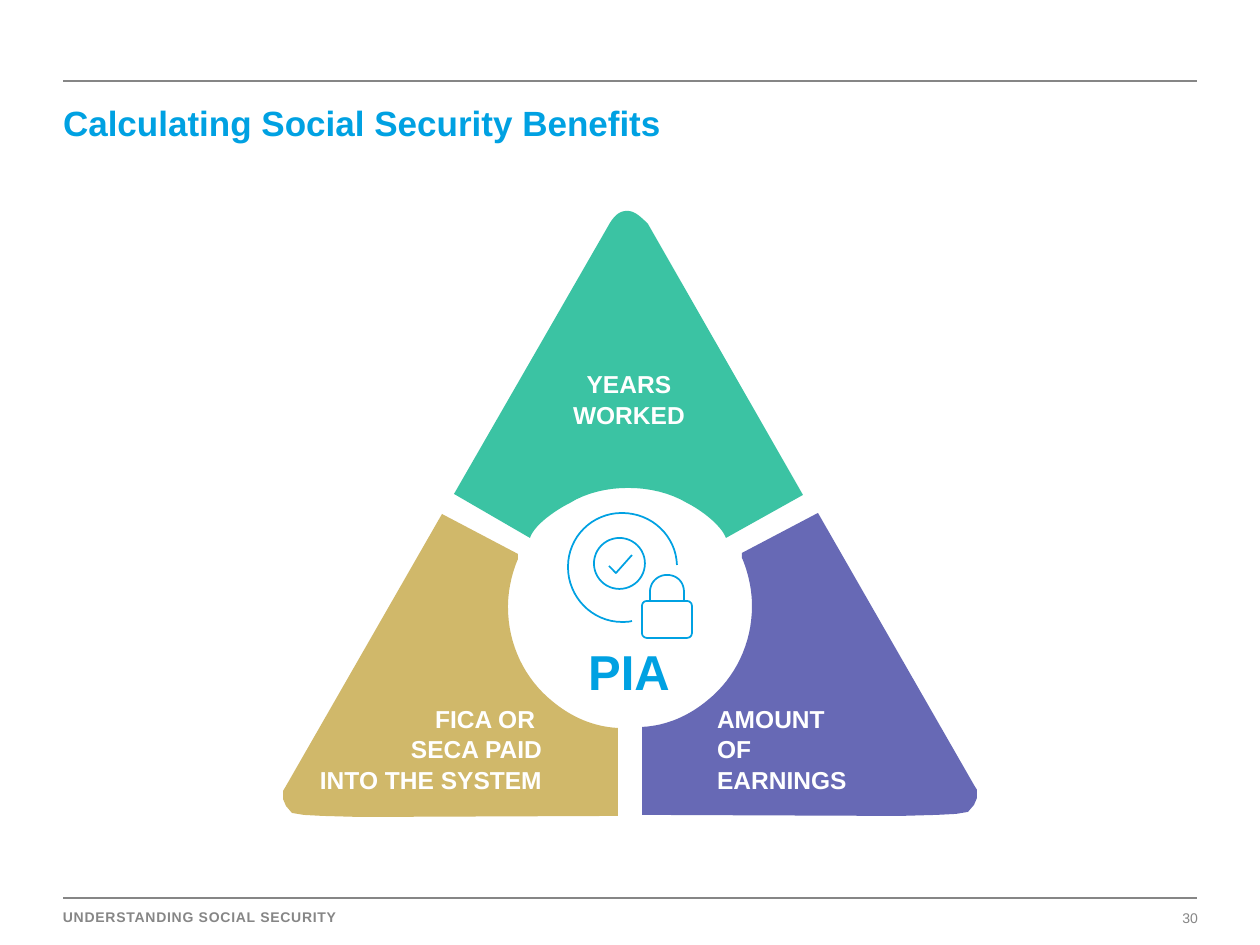
"""Builds the slide on the three factors behind the Social Security PIA."""
from lxml import etree
from pptx import Presentation
from pptx import util as u
from pptx.dml.color import RGBColor
from pptx.enum import shapes, text
from pptx.oxml.ns import qn

PX = 914400 / 126
BLUE = RGBColor(0x00, 0xA1, 0xE2)
GRAY = RGBColor(0x86, 0x86, 0x86)
WHITE = RGBColor(0xFF, 0xFF, 0xFF)
GOLD = RGBColor(0xD0, 0xB8, 0x6A)
PURPLE = RGBColor(0x67, 0x69, 0xB5)
GREEN = RGBColor(0x3B, 0xC3, 0xA3)
LEFT, CENTER, RIGHT = text.PP_ALIGN.LEFT, text.PP_ALIGN.CENTER, text.PP_ALIGN.RIGHT
TOP, MIDDLE = text.MSO_ANCHOR.TOP, text.MSO_ANCHOR.MIDDLE

TITLE = "Calculating Social Security Benefits"
TITLE_BOX = (63, 101, 1133, 43)
RULES = [(81, 1), (898, 1)]

# Outlines: pairs are corners, sextuples are cubic curves.
LEFT_WEDGE = [
    (442, 514), (518, 554), (518, 559), (512, 573, 508, 590, 508, 607),
    (508, 645, 525, 679, 552, 701), (571, 717, 594, 727, 618, 728),
    (618, 816), (360, 817), (323, 816), (304, 815), (292, 813), (286, 806),
    (283, 799), (283, 791), (286, 786),
]
TOP_WEDGE = [
    (454, 494), (530, 538), (534, 525, 556, 510, 570, 503),
    (602, 483, 654, 483, 687, 503), (701, 510, 721, 525, 726, 538),
    (803, 495), (648, 224), (639, 215, 634, 211, 627, 211),
    (620, 211, 615, 215, 610, 223),
]
COIN_RING = [
    (632, 621), (629, 622, 625, 622, 622, 622), (592, 622, 568, 597, 568, 567),
    (568, 537, 592, 513, 622, 513), (652, 513, 676, 536, 677, 565),
]
SHACKLE = [
    (684, 600), (684, 592), (684, 582, 677, 575, 667, 575),
    (658, 575, 650, 582, 650, 592), (650, 601),
]
CHECK = [(609, 566), (616, 573), (632, 555)]
COIN_BOX = (594, 538, 51, 51)
LOCK_BOX = (642, 601, 50, 37)

LABELS = [
    ("YEARS\vWORKED", (561, 363, 136, 71), (11, 5, 11, 5), 14, WHITE, True, CENTER, MIDDLE, 1.05, 0),
    ("AMOUNT \vOF \vEARNINGS", (641, 698, 221, 101), (76, 5, 6, 5), 14, WHITE, True, LEFT, MIDDLE, 1.05, 0),
    ("FICA OR \vSECA PAID\vINTO THE SYSTEM", (312, 698, 306, 101), (6, 5, 76, 5), 14, WHITE, True,
     RIGHT, MIDDLE, 1.05, 0),
    ("PIA", (588, 648, 82, 53), (0, 0, 0, 0), 28, BLUE, True, CENTER, MIDDLE, 0.9, 0),
    ("UNDERSTANDING SOCIAL SECURITY", (63, 909, 391, 19), (0, 0, 0, 0), 8, GRAY, True, LEFT, TOP, 1, 40),
    ("30", (1176, 910, 22, 16), (0, 0, 0, 0), 8, GRAY, False, RIGHT, TOP, 1, 0),
]


def px(value):
    return u.Emu(round(value * PX))


def mirror(outline, axis=630, rise=1):
    return [tuple(2 * axis - value if index % 2 == 0 else value - rise
                  for index, value in enumerate(node)) for node in outline]


def flatten(outline, steps=16):
    points = []
    for node in outline:
        if len(node) == 2:
            points.append(node)
            continue
        controls = [points[-1], node[:2], node[2:4], node[4:]]
        for step in range(1, steps + 1):
            t = step / steps
            weights = ((1 - t) ** 3, 3 * t * (1 - t) ** 2, 3 * t * t * (1 - t), t ** 3)
            points.append(tuple(sum(w * point[axis] for w, point in zip(weights, controls))
                                for axis in (0, 1)))
    return [(px(x), px(y)) for x, y in points]


def add_outline(slide, outline, close):
    start, *rest = flatten(outline)
    builder = slide.shapes.build_freeform(*start)
    builder.add_line_segments(rest, close=close)
    return builder.convert_to_shape()


def style_wedge(shape, color):
    shape.shadow.inherit = False
    shape.fill.solid()
    shape.fill.fore_color.rgb = color
    shape.line.fill.background()


def style_icon(shape):
    shape.shadow.inherit = False
    shape.fill.background()
    shape.line.color.rgb = BLUE
    shape.line.width = u.Pt(1)


def set_text(shape, words, box, insets, size, color, bold, align, anchor, spacing, tracking):
    shape.left, shape.top, shape.width, shape.height = map(px, box)
    frame = shape.text_frame
    frame.word_wrap = True
    frame.auto_size = text.MSO_AUTO_SIZE.NONE
    frame.vertical_anchor = anchor
    frame.margin_left, frame.margin_top, frame.margin_right, frame.margin_bottom = map(px, insets)
    frame.text = words
    paragraph = frame.paragraphs[0]
    paragraph.alignment = align
    paragraph.line_spacing = spacing
    font = paragraph.font
    font.name, font.size, font.bold = "Arial", u.Pt(size), bold
    font.color.rgb = color
    if tracking:
        for run in paragraph.runs:
            run.font._element.set("spc", str(tracking))


def main():
    presentation = Presentation()
    presentation.slide_width, presentation.slide_height = u.Inches(10), u.Inches(7.5)
    slide = presentation.slides.add_slide(presentation.slide_layouts[5])

    for y, width in RULES:
        rule = slide.shapes.add_connector(shapes.MSO_CONNECTOR.STRAIGHT, px(63), px(y), px(1197), px(y))
        rule.line.color.rgb = GRAY
        rule.line.width = u.Pt(width)
        etree.SubElement(rule._element.spPr, qn("a:effectLst"))

    set_text(slide.shapes.title, TITLE, TITLE_BOX, (0, 0, 0, 0), 20, BLUE, True, LEFT, TOP, 1, 0)

    for outline, color in [(LEFT_WEDGE, GOLD), (mirror(LEFT_WEDGE), PURPLE), (TOP_WEDGE, GREEN)]:
        style_wedge(add_outline(slide, outline, True), color)

    for label in LABELS:
        set_text(slide.shapes.add_textbox(0, 0, 0, 0), *label)

    for outline in (COIN_RING, SHACKLE, CHECK):
        style_icon(add_outline(slide, outline, False))
    coin = slide.shapes.add_shape(shapes.MSO_SHAPE.OVAL, *map(px, COIN_BOX))
    lock = slide.shapes.add_shape(shapes.MSO_SHAPE.ROUNDED_RECTANGLE, *map(px, LOCK_BOX))
    lock.adjustments[0] = 0.13
    for shape in (coin, lock):
        style_icon(shape)

    presentation.save("out.pptx")


if __name__ == "__main__":
    main()
